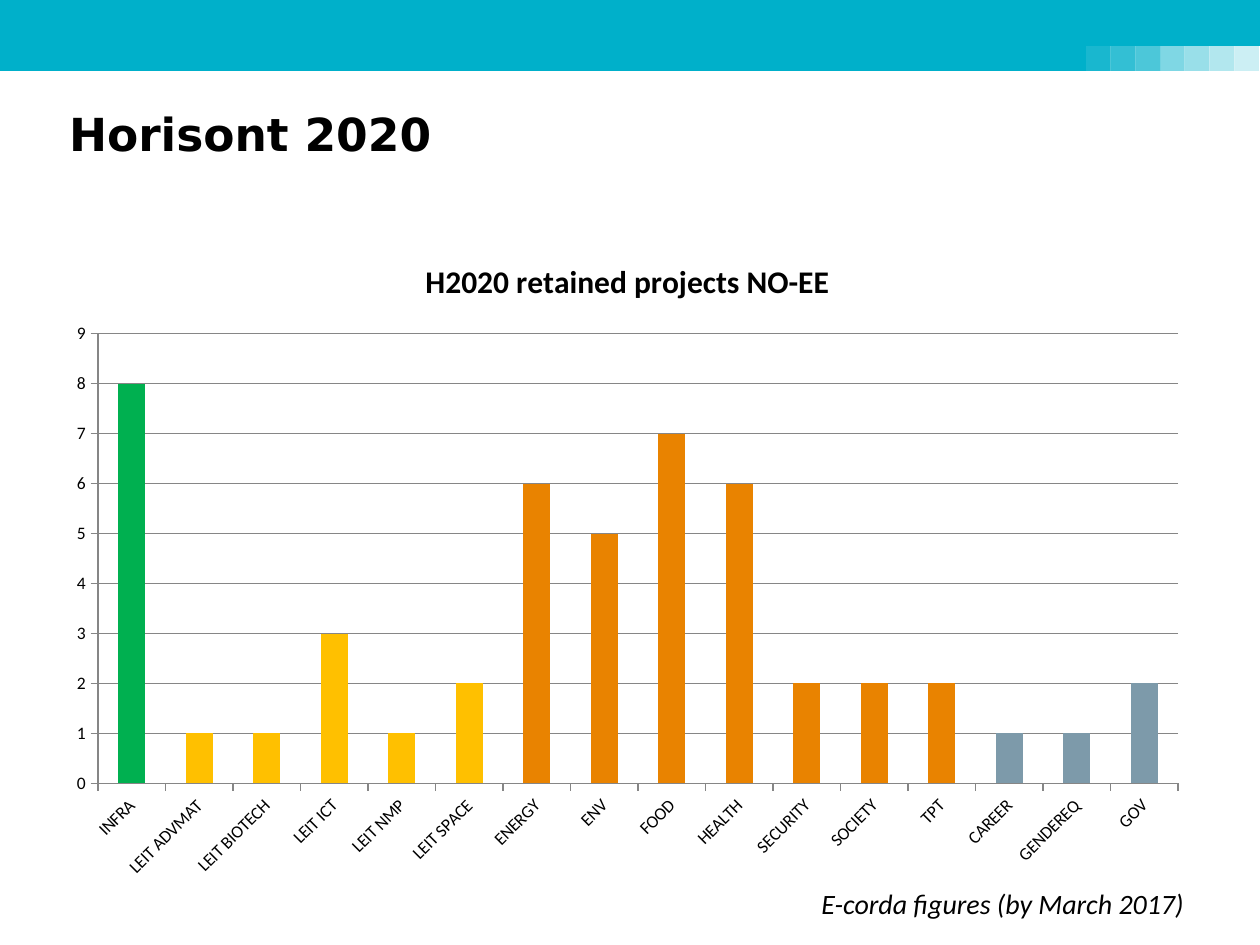
from lxml import etree
from pptx import Presentation
from pptx.chart.data import CategoryChartData
from pptx.dml.color import RGBColor
from pptx.enum.chart import XL_CHART_TYPE as ChartType, XL_TICK_MARK as TickMark
from pptx.enum.shapes import MSO_SHAPE as Shape
from pptx.enum.text import MSO_ANCHOR as Anchor, MSO_AUTO_SIZE as AutoSize
from pptx.oxml.ns import qn
from pptx.util import Pt

EMU_PER_PX = 914400 / 126

TEAL = RGBColor(0x00, 0xB0, 0xCA)
BLACK = RGBColor(0x00, 0x00, 0x00)
GREY = RGBColor(0x86, 0x86, 0x86)
GREEN = RGBColor(0x00, 0xB0, 0x50)
YELLOW = RGBColor(0xFF, 0xC0, 0x00)
ORANGE = RGBColor(0xE9, 0x83, 0x00)
SLATE = RGBColor(0x7D, 0x9A, 0xAA)

# Programme area, number of projects, bar colour
PROJECTS = [
    ("INFRA", 8, GREEN),
    ("LEIT ADVMAT", 1, YELLOW),
    ("LEIT BIOTECH", 1, YELLOW),
    ("LEIT ICT", 3, YELLOW),
    ("LEIT NMP", 1, YELLOW),
    ("LEIT SPACE", 2, YELLOW),
    ("ENERGY", 6, ORANGE),
    ("ENV", 5, ORANGE),
    ("FOOD", 7, ORANGE),
    ("HEALTH", 6, ORANGE),
    ("SECURITY", 2, ORANGE),
    ("SOCIETY", 2, ORANGE),
    ("TPT", 2, ORANGE),
    ("CAREER", 1, SLATE),
    ("GENDEREQ", 1, SLATE),
    ("GOV", 2, SLATE),
]


def px(length):
    return round(length * EMU_PER_PX)


def fill_plain(shape, color):
    shape.shadow.inherit = False
    shape.fill.solid()
    shape.fill.fore_color.rgb = color
    shape.line.fill.background()


def add_band(slide):
    """Teal band with a notch at its lower right."""
    builder = slide.shapes.build_freeform(0, 0, scale=EMU_PER_PX)
    builder.add_line_segments(
        [(1260, 0), (1260, 46), (1086, 46), (1086, 71), (0, 71)], close=True)
    fill_plain(builder.convert_to_shape(), TEAL)


def add_fading_squares(slide):
    """Squares in the notch, fading to the right."""
    opacities = [90, 80, 70, 50, 40, 30, 20]
    pitch = 173 / len(opacities)
    for index, opacity in enumerate(opacities):
        square = slide.shapes.add_shape(
            Shape.RECTANGLE, px(1086 + index * pitch), px(46), px(pitch), px(25))
        fill_plain(square, TEAL)
        color = square.fill._xPr.find(".//" + qn("a:srgbClr"))
        etree.SubElement(color, qn("a:alpha"), val=str(opacity * 1000))


def style_font(font, name, size, bold=False, italic=False):
    font.name = name
    font.size = Pt(size)
    font.bold = bold
    font.italic = italic
    font.color.rgb = BLACK


def add_text(slide, text, box, name, size, bold=False, italic=False, wrap=True):
    shape = slide.shapes.add_textbox(*map(px, box))
    frame = shape.text_frame
    frame.word_wrap = wrap
    frame.vertical_anchor = Anchor.TOP
    frame.text = text
    style_font(frame.paragraphs[0].runs[0].font, name, size, bold, italic)
    return frame


def style_axis(axis):
    axis.major_tick_mark = TickMark.OUTSIDE
    axis.minor_tick_mark = TickMark.NONE
    axis.format.line.color.rgb = GREY
    axis.format.line.width = Pt(0.75)
    style_font(axis.tick_labels.font, "Calibri", 10)


def add_project_chart(slide):
    names, values, colors = zip(*PROJECTS)
    data = CategoryChartData()
    data.categories = names
    data.add_series("Series 1", values)
    chart = slide.shapes.add_chart(
        ChartType.COLUMN_CLUSTERED, px(54), px(234), px(1147), px(656), data).chart
    style_font(chart.font, "Calibri", 10)
    chart.has_legend = False

    # Title
    chart.has_title = True
    title = chart.chart_title
    title.include_in_layout = False
    title.text_frame.text = "H2020 retained projects NO-EE"
    style_font(title.text_frame.paragraphs[0].runs[0].font, "Calibri", 18, bold=True)

    # Axes
    style_axis(chart.category_axis)
    labels = chart.category_axis._element.find(qn("c:txPr"))
    labels.find(qn("a:bodyPr")).set("rot", "-2700000")
    value_axis = chart.value_axis
    style_axis(value_axis)
    value_axis.minimum_scale = 0
    value_axis.maximum_scale = 9
    value_axis.major_unit = 1
    value_axis.has_major_gridlines = True
    value_axis.major_gridlines.format.line.color.rgb = GREY
    value_axis.major_gridlines.format.line.width = Pt(0.75)

    # Bars
    plot = chart.plots[0]
    plot.gap_width = 150
    plot.vary_by_categories = False
    series = plot.series[0]
    series.format.fill.solid()
    series.format.fill.fore_color.rgb = ORANGE
    for index, color in enumerate(colors):
        if color != ORANGE:
            fill = series.points[index].format.fill
            fill.solid()
            fill.fore_color.rgb = color


def main():
    presentation = Presentation()
    presentation.slide_width = px(1260)
    presentation.slide_height = px(945)
    slide = presentation.slides.add_slide(presentation.slide_layouts[6])

    # Header
    add_band(slide)
    add_fading_squares(slide)
    title = add_text(slide, "Horisont 2020", (64, 101, 1150, 149),
                     "DejaVu Sans", 26, bold=True)
    title.margin_left = title.margin_right = title.margin_top = px(5)

    # Chart and its source
    add_project_chart(slide)
    caption = add_text(slide, "E-corda figures (by March 2017)", (809, 880, 393, 47),
                       "Calibri", 16, italic=True, wrap=False)
    caption.auto_size = AutoSize.SHAPE_TO_FIT_TEXT

    presentation.save("out.pptx")


if __name__ == "__main__":
    main()
